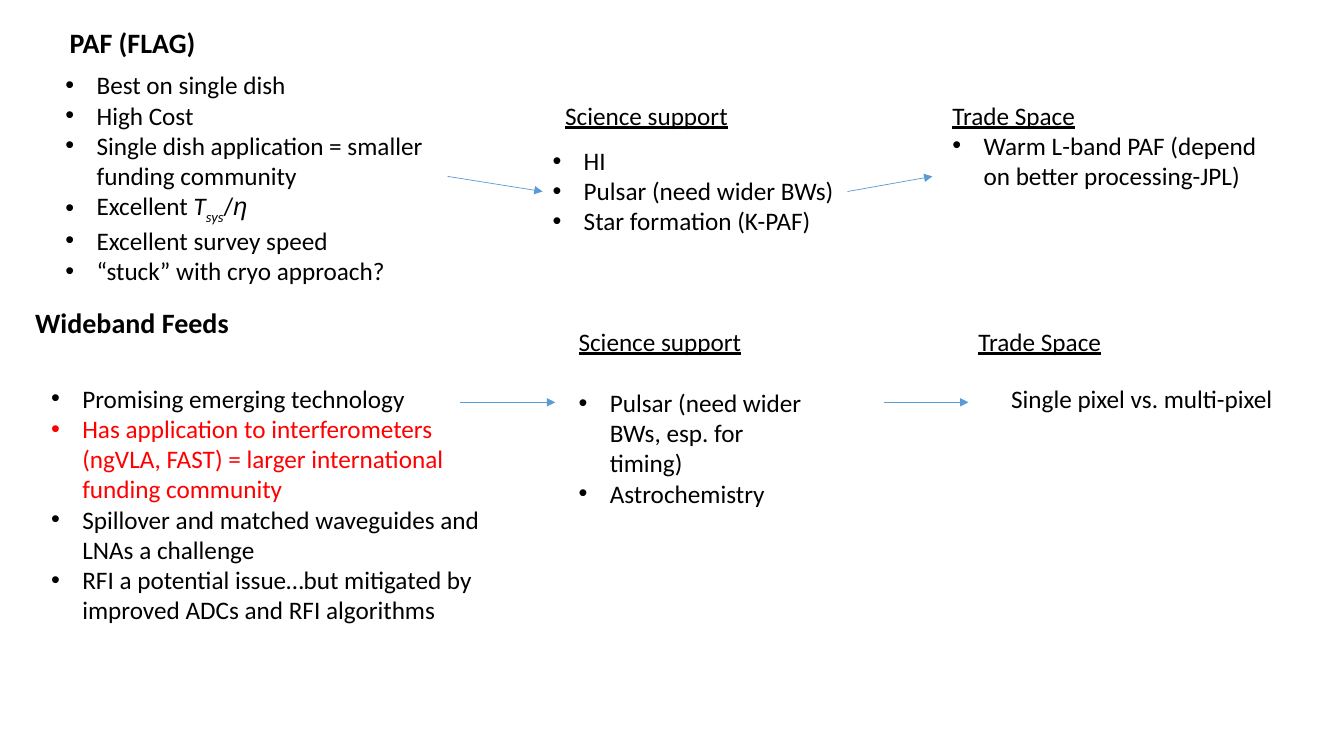
from lxml import etree
from pptx import Presentation
from pptx.dml.color import RGBColor
from pptx.enum.shapes import MSO_CONNECTOR
from pptx.enum.text import MSO_AUTO_SIZE
from pptx.oxml.ns import qn
from pptx.util import Inches, Pt

STRAIGHT = MSO_CONNECTOR.STRAIGHT
GROW = MSO_AUTO_SIZE.SHAPE_TO_FIT_TEXT

COLORS = {"text": "000000", "highlight": "FF0000", "arrow": "5B9BD5"}
FONT = "Calibri"
COLUMNS, ROWS = 160, 90
SLIDE_W, SLIDE_H = Inches(13.333), Inches(7.5)
BULLET_INDENT = Inches(0.31)


def cols(count):
    return round(SLIDE_W * count / COLUMNS)


def rows(count):
    return round(SLIDE_H * count / ROWS)


def add_text_frame(slide, area, wrap):
    left, top, width, height = area
    frame = slide.shapes.add_textbox(
        cols(left), rows(top), cols(width), rows(height)).text_frame
    frame.word_wrap = wrap
    frame.auto_size = GROW
    return frame


def style_paragraph(paragraph, size=18, color="text", bold=None, underline=None):
    font = paragraph.font
    font.name = FONT
    font.size = Pt(size)
    font.color.rgb = RGBColor.from_string(COLORS[color])
    font.bold = bold
    font.underline = underline


def add_bullet(paragraph):
    props = paragraph._p.get_or_add_pPr()
    props.set("marL", str(BULLET_INDENT))
    props.set("indent", str(-BULLET_INDENT))
    bullet_font = etree.Element(qn("a:buFont"), typeface="Arial")
    bullet_char = etree.Element(qn("a:buChar"), char="•")
    props.insert(0, bullet_font)
    props.insert(1, bullet_char)


def add_heading(slide, area, text, wrap=False, **style):
    frame = add_text_frame(slide, area, wrap)
    heading = frame.paragraphs[0]
    heading.add_run().text = text
    style_paragraph(heading, **style)
    return frame


def fill_bullets(frame, items, highlighted=None):
    """Add one bullet per item, using the first paragraph if it is still empty."""
    for item in items:
        first = frame.paragraphs[0]
        bullet = frame.add_paragraph() if first.runs else first
        bullet.add_run().text = item
        style_paragraph(bullet, color="highlight" if item == highlighted else "text")
        add_bullet(bullet)


def add_bullets(slide, area, items, wrap=True, highlighted=None):
    frame = add_text_frame(slide, area, wrap)
    fill_bullets(frame, items, highlighted)
    return frame


def add_formula(paragraph):
    """Append T_sys/η to the paragraph."""
    for symbol, italic, subscript, typeface in (
            ("T", True, False, None), ("sys", True, True, None),
            ("/", False, False, None), ("η", True, False, "Arial")):
        run = paragraph.add_run()
        run.text = symbol
        run.font.italic = italic
        if typeface:
            run.font.name = typeface
        if subscript:
            run._r.get_or_add_rPr().set("baseline", "-25000")


def add_arrow(slide, start, end):
    arrow = slide.shapes.add_connector(
        STRAIGHT, cols(start[0]), rows(start[1]), cols(end[0]), rows(end[1]))
    arrow.line.color.rgb = RGBColor.from_string(COLORS["arrow"])
    arrow.line.width = Pt(0.5)
    etree.SubElement(arrow.line._get_or_add_ln(), qn("a:tailEnd"), type="triangle")
    etree.SubElement(arrow._element.spPr, qn("a:effectLst"))


def add_paf(slide):
    add_heading(slide, (7.1, 2.4, 17.5, 5.3), "PAF (FLAG)", size=20, bold=True)
    features = add_bullets(slide, (6.6, 7.7, 46.7, 26.6), [
        "Best on single dish",
        "High Cost",
        "Single dish application = smaller funding community",
        "Excellent ",
        "Excellent survey speed",
        "“stuck” with cryo approach?",
    ])
    add_formula(features.paragraphs[3])

    add_heading(slide, (66.1, 11.3, 22.1, 4.8), "Science support", underline=True)
    add_bullets(slide, (64.6, 16.7, 36.2, 12.1), [
        "HI", "Pulsar (need wider BWs)", "Star formation (K-PAF)"], wrap=False)

    trade_space = add_heading(slide, (112.2, 11.3, 39.6, 12.1), "Trade Space",
                              wrap=True, underline=True)
    fill_bullets(trade_space, ["Warm L-band PAF (depend on better processing-JPL)"])

    add_arrow(slide, (53.3, 21), (64.6, 22.8))
    add_arrow(slide, (100.9, 22.8), (111, 21))


def add_wideband(slide):
    add_heading(slide, (3, 35.8, 25.7, 5.3), "Wideband Feeds", size=20, bold=True)
    interferometers = ("Has application to interferometers (ngVLA, FAST) = "
                       "larger international funding community")
    add_bullets(slide, (4.9, 45, 57.4, 41.2), [
        "Promising emerging technology",
        interferometers,
        "Spillover and matched waveguides and LNAs a challenge",
        "RFI a potential issue…but mitigated by improved ADCs and RFI algorithms",
    ], highlighted=interferometers)

    add_heading(slide, (67.7, 38.2, 22.1, 4.8), "Science support", underline=True)
    add_bullets(slide, (67.7, 45.5, 31.1, 15.7), [
        "Pulsar (need wider BWs, esp. for timing)", "Astrochemistry"])

    add_heading(slide, (115.3, 38.2, 39.6, 4.8), "Trade Space",
                wrap=True, underline=True)
    add_heading(slide, (119.2, 45, 34, 4.8), "Single pixel vs. multi-pixel")

    for start, end in ((54.8, 66.1), (105.2, 115.3)):
        add_arrow(slide, (start, 47.9), (end, 47.9))


def main():
    deck = Presentation()
    deck.slide_width, deck.slide_height = SLIDE_W, SLIDE_H
    slide = deck.slides.add_slide(deck.slide_layouts[6])
    # Upper half: phased array feed
    add_paf(slide)
    # Lower half: wideband feeds
    add_wideband(slide)
    deck.save("out.pptx")


if __name__ == "__main__":
    main()
